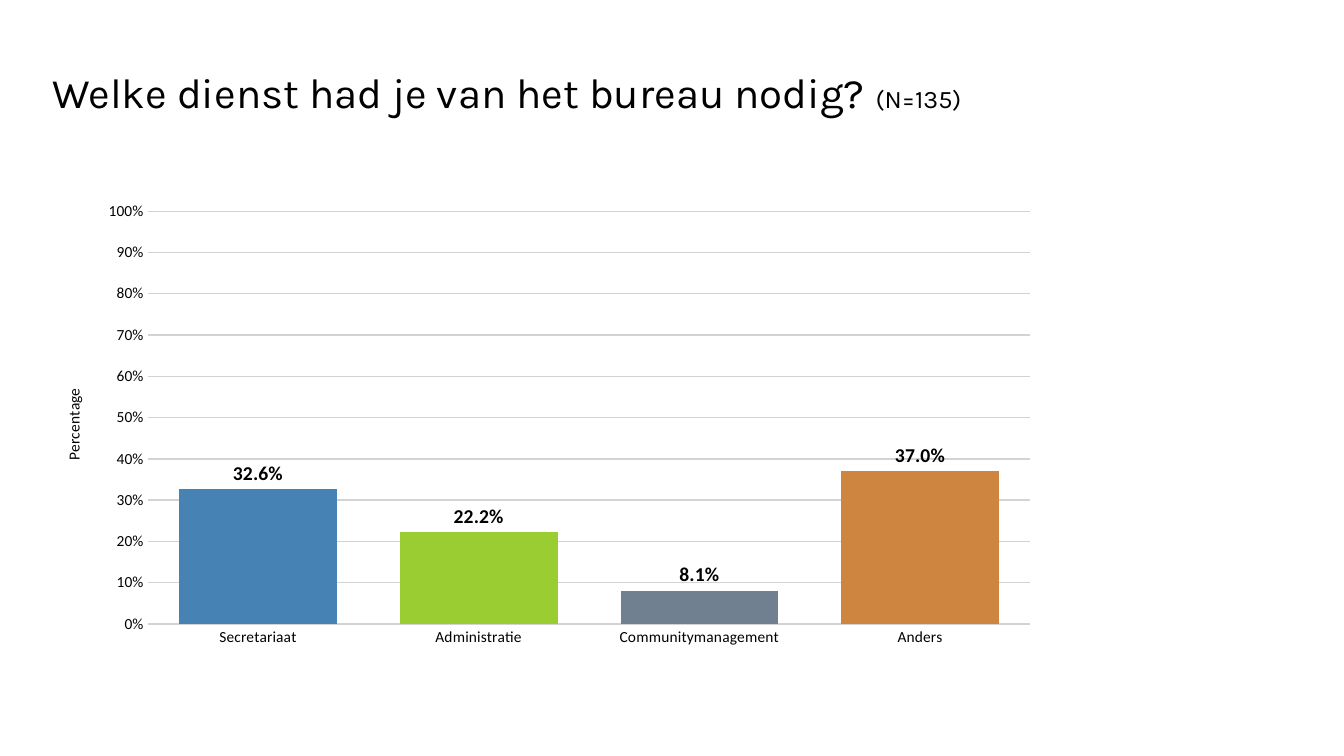
from pptx import Presentation
from pptx.chart.data import CategoryChartData
from pptx.dml.color import RGBColor
from pptx.enum.chart import XL_CHART_TYPE as ChartType
from pptx.enum.chart import XL_LABEL_POSITION as LabelPosition
from pptx.enum.chart import XL_TICK_MARK as TickMark
from pptx.enum.text import MSO_ANCHOR as Anchor
from pptx.enum.text import PP_ALIGN as Align
from pptx.util import Inches, Pt


def colour(hex_code):
    return RGBColor.from_string(hex_code)


class SurveySlide:
    heading_font = "Karla"
    chart_font = "Calibri"
    ink = "000000"
    grid = "D3D3D3"

    def __init__(self, deck):
        self.slide = deck.slides.add_slide(deck.slide_layouts[5])

    def style(self, font, name, size, bold=False):
        font.name = name
        font.size = Pt(size)
        font.bold = bold
        font.color.rgb = colour(self.ink)

    def heading(self, question, sample, left, top, width, height):
        title = self.slide.shapes.title
        title.left, title.top = Inches(left), Inches(top)
        title.width, title.height = Inches(width), Inches(height)
        frame = title.text_frame
        frame.word_wrap = True
        frame.vertical_anchor = Anchor.MIDDLE
        line = frame.paragraphs[0]
        line.alignment = Align.LEFT
        line.line_spacing = 0.9
        self.style(line.font, self.heading_font, 30)
        line.add_run().text = question + " "
        sample_size = line.add_run()
        sample_size.text = sample
        sample_size.font.size = Pt(18)

    def column_chart(self, services, axis_name, left, top, width, height):
        answers = CategoryChartData(number_format="0.0%")
        answers.categories = [name for name, share, fill in services]
        answers.add_series("Series 1", [share for name, share, fill in services])
        chart = self.slide.shapes.add_chart(
            ChartType.COLUMN_CLUSTERED,
            Inches(left), Inches(top), Inches(width), Inches(height), answers,
        ).chart
        chart.has_legend = False
        chart.has_title = False
        self.style(chart.font, self.chart_font, 11)
        self.axes(chart, axis_name)
        self.columns(chart.plots[0], [fill for name, share, fill in services])

    def axes(self, chart, axis_name):
        for axis in (chart.category_axis, chart.value_axis):
            axis.major_tick_mark = TickMark.INSIDE
            axis.minor_tick_mark = TickMark.NONE
            axis.format.line.fill.background()
        percentage = chart.value_axis
        percentage.minimum_scale, percentage.maximum_scale = 0, 1
        percentage.major_unit = 0.1
        percentage.tick_labels.number_format = "0%"
        percentage.tick_labels.number_format_is_linked = False
        percentage.major_gridlines.format.line.color.rgb = colour(self.grid)
        percentage.major_gridlines.format.line.width = Pt(1)
        caption = percentage.axis_title.text_frame
        caption.text = axis_name
        self.style(caption.paragraphs[0].font, self.chart_font, 11)

    def columns(self, plot, fills):
        plot.gap_width = 40
        plot.vary_by_categories = False
        shares = plot.series[0]
        shares.format.fill.solid()
        shares.format.fill.fore_color.rgb = colour(fills[0])
        for index, fill in enumerate(fills[1:], 1):
            column = shares.points[index].format.fill
            column.solid()
            column.fore_color.rgb = colour(fill)
        labels = shares.data_labels
        labels.show_value = True
        labels.position = LabelPosition.OUTSIDE_END
        labels.number_format = "0.0%"
        labels.number_format_is_linked = False
        self.style(labels.font, self.chart_font, 14, bold=True)


def main():
    deck = Presentation()
    deck.slide_width, deck.slide_height = Inches(13.33), Inches(7.5)
    survey = SurveySlide(deck)
    survey.heading("Welke dienst had je van het bureau nodig?", "(N=135)",
                   0.42, 0.22, 11.5, 1.45)
    services = [
        ("Secretariaat", 0.326, "4682B4"),
        ("Administratie", 0.222, "9ACD32"),
        ("Communitymanagement", 0.081, "708090"),
        ("Anders", 0.37, "CD853F"),
    ]
    survey.column_chart(services, "Percentage", 0.42, 1.91, 10, 4.6)
    deck.save("out.pptx")


if __name__ == "__main__":
    main()
